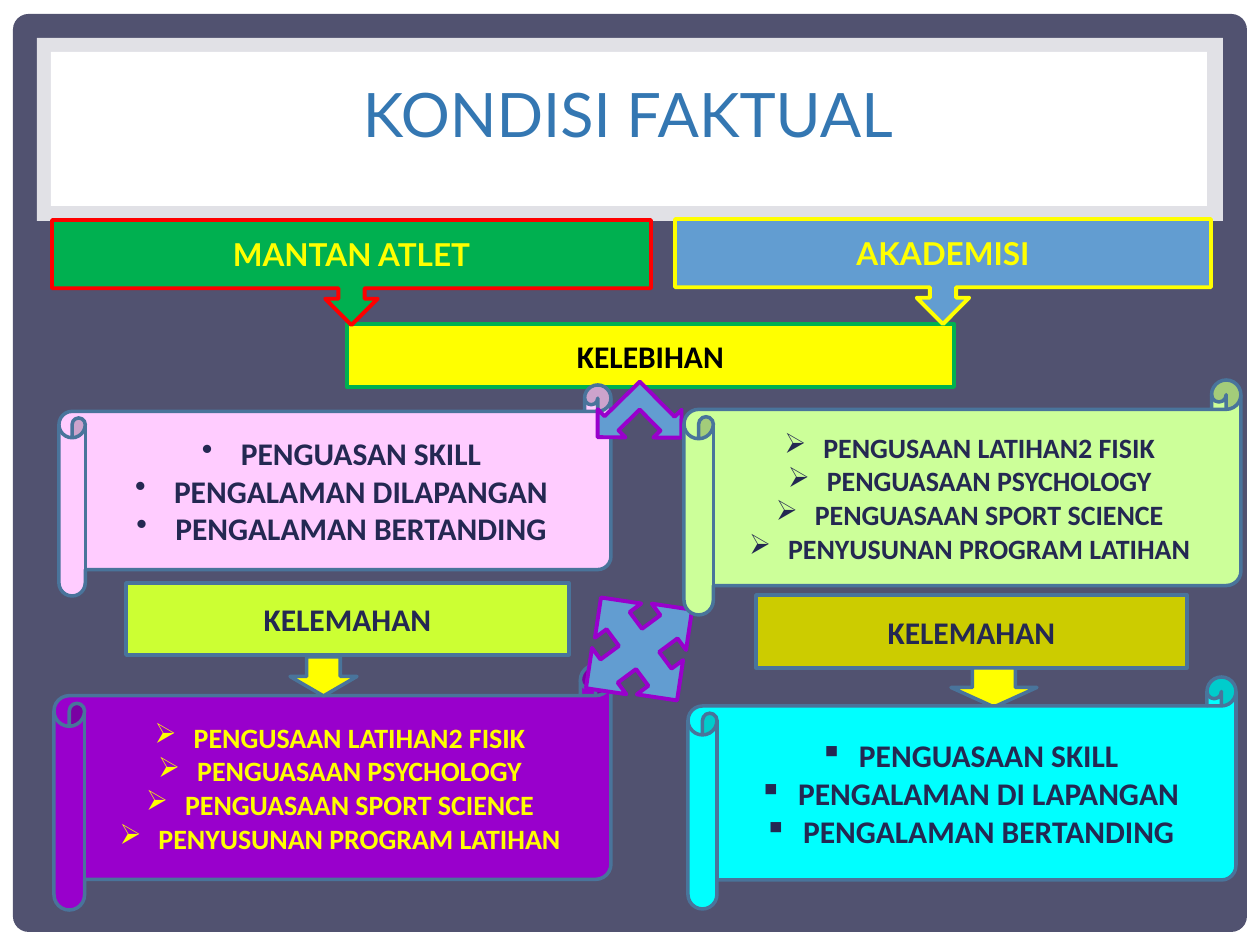
from dataclasses import dataclass
from typing import NamedTuple

from lxml.etree import SubElement
from pptx import Presentation
from pptx.dml.color import RGBColor
from pptx.enum.shapes import MSO_SHAPE as Shape
from pptx.enum.text import MSO_ANCHOR, PP_ALIGN
from pptx.oxml.ns import qn
from pptx.util import Emu, Pt


@dataclass(frozen=True)
class Theme:
    frame: str = "515270"
    white: str = "FFFFFF"
    title: str = "3477B2"
    ink: str = "242852"
    black: str = "000000"
    edge: str = "49749B"
    yellow: str = "FFFF00"
    green: str = "00B050"
    red: str = "FF0000"
    blue: str = "629DD1"
    purple: str = "9900CC"
    pink: str = "FFCCFF"
    mint: str = "CCFF99"
    cyan: str = "00FFFF"
    lime: str = "CCFF33"
    olive: str = "CCCC00"
    body: str = "Calibri"
    head: str = "Lato"
    large: int = 35
    mid: int = 18
    small: int = 16
    thin: float = 2
    thick: float = 2.25


T = Theme()


class Box(NamedTuple):
    x: int
    y: int
    w: int
    h: int


class Label(NamedTuple):
    lines: tuple[str, ...]
    color: str = T.ink
    size: int = T.mid
    font: str = T.body
    bold: bool = True
    bullet: str = ""


class Item(NamedTuple):
    kind: Shape
    box: Box
    fill: str
    line: str = T.edge
    width: float = T.thin
    label: Label | None = None
    turn: float = 0


def px(count: int) -> Emu:
    return Emu(round(count * 914400 / 126))


def tint(text: str) -> RGBColor:
    return RGBColor.from_string(text)


def add_bullet(para, mark: str) -> None:
    props = para._p.get_or_add_pPr()
    props.set("marL", str(px(39)))
    props.set("indent", str(-px(39)))
    SubElement(props, qn("a:buChar")).set("char", mark)


def write(shape, label: Label) -> None:
    frame = shape.text_frame
    frame.word_wrap = True
    frame.vertical_anchor = MSO_ANCHOR.MIDDLE
    for row, line in enumerate(label.lines):
        para = frame.add_paragraph() if row else frame.paragraphs[0]
        para.text = line
        para.alignment = PP_ALIGN.CENTER
        if label.bullet:
            add_bullet(para, label.bullet)
        font = para.font
        font.name, font.size, font.bold = label.font, Pt(label.size), label.bold
        font.color.rgb = tint(label.color)


def draw(slide, item: Item):
    shape = slide.shapes.add_shape(item.kind, *map(px, item.box))
    shape.shadow.inherit = False
    shape.rotation = item.turn
    shape.fill.solid()
    shape.fill.fore_color.rgb = tint(item.fill)
    if item.line:
        shape.line.color.rgb = tint(item.line)
        shape.line.width = Pt(item.width)
    else:
        shape.line.fill.background()
    if item.label:
        write(shape, item.label)
    return shape


def draw_frame(slide) -> None:
    panel = draw(slide, Item(Shape.ROUNDED_RECTANGLE, Box(13, 14, 1234, 918), T.frame, ""))
    panel.adjustments[0] = 0.017
    band = draw(slide, Item(Shape.RECTANGLE, Box(37, 38, 1186, 183), T.white, ""))
    color = band.fill._xPr.find(qn("a:solidFill"))[0]
    SubElement(color, qn("a:alpha")).set("val", "83000")
    draw(slide, Item(Shape.RECTANGLE, Box(51, 52, 1156, 154), T.white, ""))
    title = slide.shapes.add_textbox(*map(px, Box(59, 57, 1138, 112)))
    write(title, Label(("KONDISI FAKTUAL",), T.title, T.large, T.head, False))


def callout(box: Box, text: str, fill: str, line: str) -> Item:
    label = Label((text,), T.yellow, font=T.head)
    return Item(Shape.DOWN_ARROW_CALLOUT, box, fill, line, T.thick, label)


def scroll(box: Box, fill: str, label: Label) -> Item:
    return Item(Shape.HORIZONTAL_SCROLL, box, fill, label=label)


def bar(box: Box, fill: str) -> Item:
    return Item(Shape.RECTANGLE, box, fill, label=Label(("KELEMAHAN",)))


def arrow(box: Box) -> Item:
    return Item(Shape.DOWN_ARROW, box, T.yellow)


def cross(kind: Shape, box: Box, turn: float) -> Item:
    return Item(kind, box, T.blue, T.purple, T.thick, turn=turn)


THEORY = (
    "PENGUSAAN LATIHAN2 FISIK",
    "PENGUASAAN PSYCHOLOGY",
    "PENGUASAAN SPORT SCIENCE",
    "PENYUSUNAN PROGRAM LATIHAN",
)
FIELD = ("PENGUASAN SKILL", "PENGALAMAN DILAPANGAN", "PENGALAMAN BERTANDING")
SKILLS = ("PENGUASAAN SKILL", "PENGALAMAN DI LAPANGAN", "PENGALAMAN BERTANDING")

ITEMS = (
    Item(Shape.RECTANGLE, Box(347, 324, 607, 63), T.yellow, T.green, T.thick,
         Label(("KELEBIHAN",), T.black)),
    callout(Box(52, 220, 599, 105), "MANTAN ATLET", T.green, T.red),
    callout(Box(675, 219, 536, 105), "AKADEMISI", T.blue, T.yellow),
    scroll(Box(59, 385, 552, 211), T.pink, Label(FIELD, bullet="•")),
    scroll(Box(54, 665, 557, 245), T.purple, Label(THEORY, T.yellow, T.small, bullet="➢")),
    cross(Shape.QUAD_ARROW, Box(575, 583, 128, 132), 53.5),
    bar(Box(126, 583, 443, 72), T.lime),
    bar(Box(756, 595, 431, 73), T.olive),
    cross(Shape.LEFT_UP_ARROW, Box(600, 384, 79, 79), 225.4),
    arrow(Box(290, 657, 67, 39)),
    arrow(Box(951, 668, 86, 39)),
    scroll(Box(688, 677, 548, 232), T.cyan, Label(SKILLS, bullet="▪")),
    scroll(Box(684, 380, 557, 235), T.mint, Label(THEORY, size=T.small, bullet="➢")),
)


def main() -> None:
    deck = Presentation()
    deck.slide_width, deck.slide_height = px(1260), px(945)
    slide = deck.slides.add_slide(deck.slide_layouts[6])
    draw_frame(slide)
    for item in ITEMS:
        draw(slide, item)
    deck.save("out.pptx")


if __name__ == "__main__":
    main()
